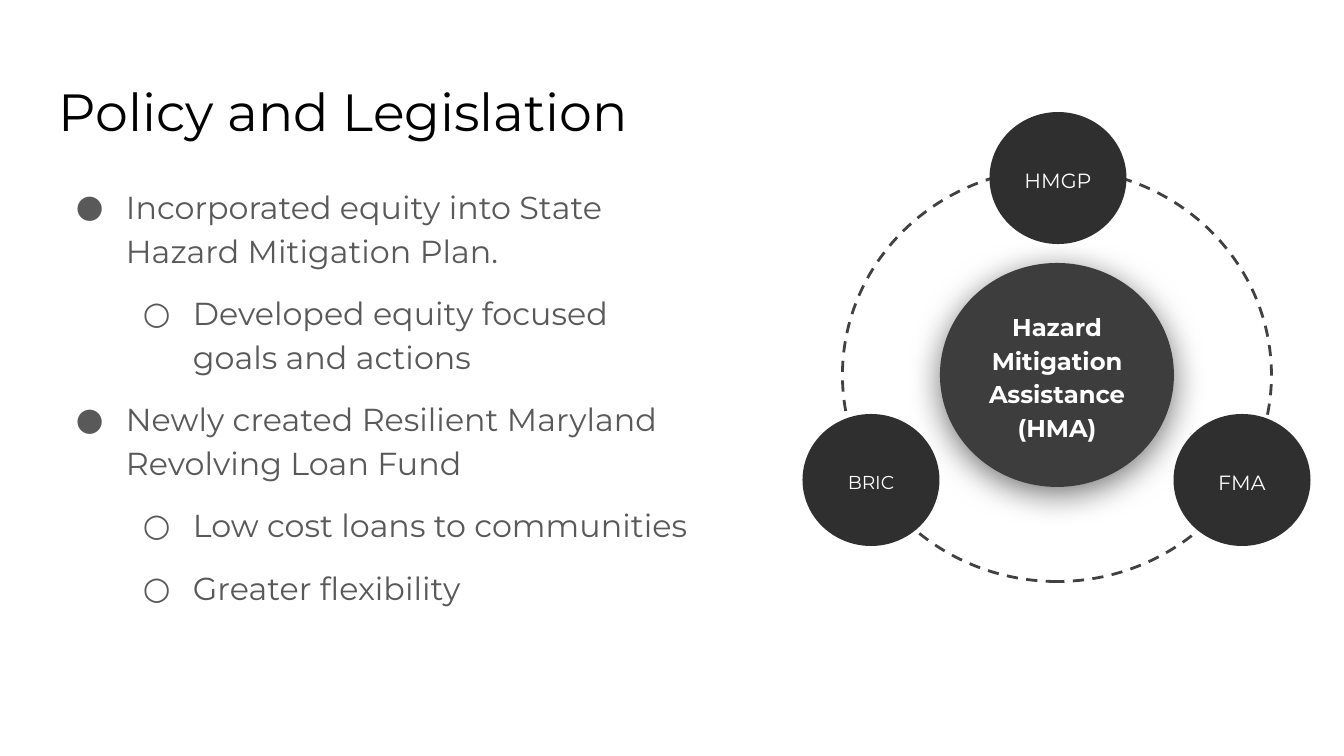
"""Build the Policy and Legislation slide with its hazard mitigation cycle."""
from dataclasses import dataclass

from lxml.etree import SubElement
from pptx import Presentation
from pptx.dml.color import RGBColor
from pptx.enum.dml import MSO_LINE
from pptx.enum.shapes import MSO_SHAPE as Shape
from pptx.enum.text import MSO_ANCHOR as Anchor, MSO_AUTO_SIZE as AutoSize, PP_ALIGN as Align
from pptx.oxml.ns import qn
from pptx.util import Pt

TITLE = "Policy and Legislation"
BULLETS = [
    (0, "Incorporated equity into State Hazard Mitigation Plan."),
    (1, "Developed equity focused goals and actions"),
    (0, "Newly created Resilient Maryland Revolving Loan Fund"),
    (1, "Low cost loans to communities"),
    (1, "Greater flexibility"),
]
HUB = "Hazard Mitigation Assistance (HMA)"
NODES = [
    ("HMGP", (1058, 178), (98, 90), 11),
    ("BRIC", (871, 480), (112, 90), 10),
    ("FMA", (1242, 480), (98, 90), 11),
]


@dataclass(frozen=True)
class Theme:
    font: str = "Montserrat"
    title: str = "000000"
    body: str = "595959"
    ring: str = "414141"
    hub: str = "3D3D3D"
    node: str = "2F2F2F"
    label: str = "FFFFFF"
    shadow: str = "000000"
    title_size: int = 28
    body_size: int = 17
    hub_size: int = 13


THEME = Theme()
SCALE = 9144000 / 1344
SLIDE_SIZE = (1344, 756)
TITLE_BOX = (46, 66, 1253, 85)
BODY_BOX = (46, 169, 661, 503)
CENTER = (1057, 375)
RING_SIZE, HUB_SIZE, NODE_SIZE = (413, 429), (234, 224), (137, 132)
HUB_LABEL = (173, 102)
INSET, STEP, HANG = 13, 67, 50
MARKS = "●○"


def px(value):
    return round(value * SCALE)


def around(center, size):
    return [px(middle - extent / 2) for middle, extent in zip(center, size)] + [px(n) for n in size]


def color(code):
    return RGBColor.from_string(code)


def prepare(frame, anchor=Anchor.TOP):
    frame.word_wrap = True
    frame.auto_size = AutoSize.NONE
    frame.vertical_anchor = anchor
    frame.margin_left = frame.margin_right = px(INSET)
    frame.margin_top = frame.margin_bottom = px(INSET)


def add_span(para, text, size, code, bold=False):
    span = para.add_run()
    span.text = text
    span.font.name = THEME.font
    span.font.size = Pt(size)
    span.font.bold = bold
    span.font.color.rgb = color(code)


def add_bullet(para, level):
    para.level = level
    props = para._p.get_or_add_pPr()
    props.set("marL", str(px(STEP * (level + 1))))
    props.set("indent", str(-px(HANG)))
    tint = SubElement(props, qn("a:buClr"))
    SubElement(tint, qn("a:srgbClr"), val=THEME.body)
    SubElement(props, qn("a:buFont"), typeface=THEME.font)
    SubElement(props, qn("a:buChar"), char=MARKS[level])


def add_disc(shapes, center, size, code):
    disc = shapes.add_shape(Shape.OVAL, *around(center, size))
    disc.shadow.inherit = False
    disc.fill.solid()
    disc.fill.fore_color.rgb = color(code)
    disc.line.fill.background()
    return disc


def add_label(shapes, center, size, text, points, bold=False):
    box = shapes.add_textbox(*around(center, size))
    prepare(box.text_frame, Anchor.MIDDLE)
    para = box.text_frame.paragraphs[0]
    para.alignment = Align.CENTER
    para.line_spacing = 1.15
    add_span(para, text, points, THEME.label, bold)


def add_glow(disc):
    effects = disc._element.spPr.find(qn("a:effectLst"))
    glow = SubElement(effects, qn("a:outerShdw"), blurRad=str(Pt(18)), dist=str(Pt(4)),
                      dir="5400000", algn="bl", rotWithShape="0")
    tint = SubElement(glow, qn("a:srgbClr"), val=THEME.shadow)
    SubElement(tint, qn("a:alpha"), val="55000")


def add_title(page):
    title = page.shapes.title
    title.left, title.top, title.width, title.height = map(px, TITLE_BOX)
    prepare(title.text_frame)
    para = title.text_frame.paragraphs[0]
    para.alignment = Align.LEFT
    add_span(para, TITLE, THEME.title_size, THEME.title)


def add_body(page):
    frame = page.shapes.add_textbox(*map(px, BODY_BOX)).text_frame
    prepare(frame)
    for index, (level, text) in enumerate(BULLETS):
        para = frame.add_paragraph() if index else frame.paragraphs[0]
        add_bullet(para, level)
        para.line_spacing = 1.15
        para.space_before = Pt(10 if index else 0)
        add_span(para, text, THEME.body_size, THEME.body)


def add_cycle(page):
    ring = page.shapes.add_shape(Shape.OVAL, *around(CENTER, RING_SIZE))
    ring.rotation = 270
    ring.shadow.inherit = False
    ring.fill.background()
    ring.line.color.rgb = color(THEME.ring)
    ring.line.width = Pt(1.5)
    ring.line.dash_style = MSO_LINE.DASH

    group = page.shapes.add_group_shape()
    add_glow(add_disc(group.shapes, CENTER, HUB_SIZE, THEME.hub))
    add_label(group.shapes, CENTER, HUB_LABEL, HUB, THEME.hub_size, True)
    for text, center, label_size, points in NODES:
        group = page.shapes.add_group_shape()
        add_disc(group.shapes, center, NODE_SIZE, THEME.node)
        add_label(group.shapes, center, label_size, text, points)


def main():
    deck = Presentation()
    deck.slide_width, deck.slide_height = map(px, SLIDE_SIZE)
    page = deck.slides.add_slide(deck.slide_layouts[5])
    add_title(page)
    add_body(page)
    add_cycle(page)
    deck.save("out.pptx")


if __name__ == "__main__":
    main()
